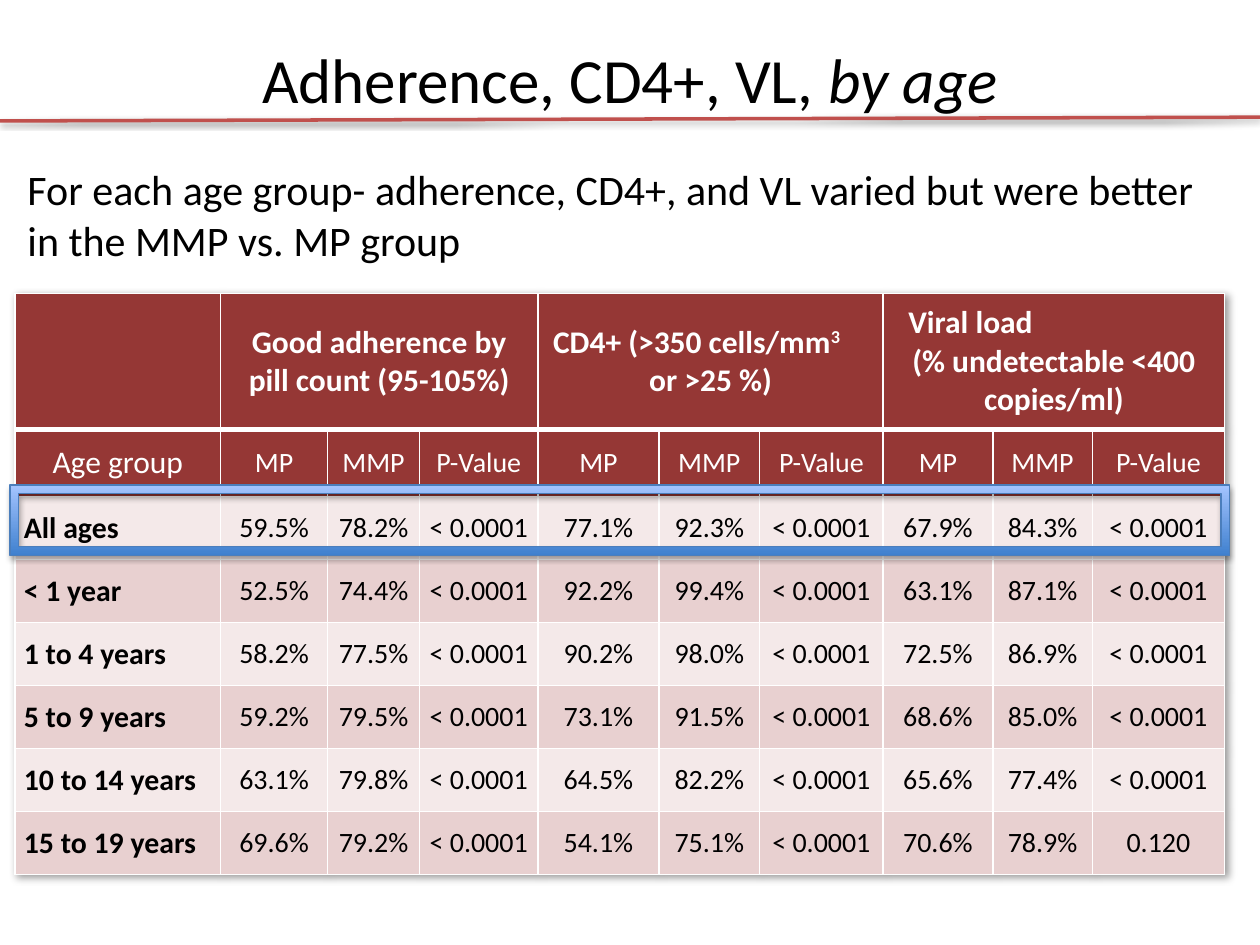
import pptx
import pptx.util
import pptx.oxml
import pptx.dml.color
import pptx.enum.text
import pptx.enum.shapes

Inches = pptx.util.Inches
Pt = pptx.util.Pt
ALIGN = pptx.enum.text.PP_ALIGN
MIDDLE = pptx.enum.text.MSO_ANCHOR.MIDDLE
NS = 'xmlns:a="http://schemas.openxmlformats.org/drawingml/2006/main"'

COLORS = {
    "ink": "000000", "white": "FFFFFF", "head": "953735",
    "pale": "F4E9E9", "rose": "E8D0D0", "rule": "C0504D",
    "deep": "3F80CE", "light": "A4C4FF", "edge": "4B7EBC",
}

# Table content: each heading is a list of (runs, left indent or None if centred)
HEADS = [
    [([("Good adherence by pill count (95-105%)", 0)], None)],
    [([("CD4+ (>350 cells/mm", 0), ("3", 30)], 0.05),
     ([("or >25 %)", 0)], None)],
    [([("Viral load", 0)], 0.13),
     ([("(% undetectable <400 copies/ml)", 0)], None)],
]
LABELS = ["Age group"] + ["MP", "MMP", "P-Value"] * 3
LOW = "< 0.0001"
ROWS = [
    ["All ages", "59.5%", "78.2%", LOW, "77.1%", "92.3%", LOW, "67.9%", "84.3%", LOW],
    ["< 1 year", "52.5%", "74.4%", LOW, "92.2%", "99.4%", LOW, "63.1%", "87.1%", LOW],
    ["1 to 4 years", "58.2%", "77.5%", LOW, "90.2%", "98.0%", LOW, "72.5%", "86.9%", LOW],
    ["5 to 9 years", "59.2%", "79.5%", LOW, "73.1%", "91.5%", LOW, "68.6%", "85.0%", LOW],
    ["10 to 14 years", "63.1%", "79.8%", LOW, "64.5%", "82.2%", LOW, "65.6%", "77.4%", LOW],
    ["15 to 19 years", "69.6%", "79.2%", LOW, "54.1%", "75.1%", LOW, "70.6%", "78.9%", "0.120"],
]
WIDTHS = [1.63, 0.85, 0.73, 0.94, 0.96, 0.8, 0.98, 0.87, 0.79, 1.05]
HEIGHTS = [1.08, 0.53] + [0.5] * len(ROWS)


def color(name):
    return pptx.dml.color.RGBColor.from_string(COLORS[name])


def write(para, text, size=16, ink="ink", bold=False, italic=False,
          align=ALIGN.CENTER, base=0, font="Calibri"):
    """Add a formatted run to a paragraph."""
    para.alignment = align
    run = para.add_run()
    run.text = text
    run.font.name, run.font.size = font, Pt(size)
    run.font.bold, run.font.italic = bold, italic
    run.font.color.rgb = color(ink)
    if base:
        run.font._element.set("baseline", str(base * 1000))


def shadow(alpha, blur, dist, angle=90):
    """Return an effect list with one outer black shadow."""
    return pptx.oxml.parse_xml(
        f'<a:effectLst {NS}><a:outerShdw blurRad="{Pt(blur)}" dist="{Pt(dist)}" '
        f'dir="{angle * 60000}" rotWithShape="0"><a:srgbClr val="{COLORS["ink"]}">'
        f'<a:alpha val="{alpha * 1000}"/></a:srgbClr></a:outerShdw></a:effectLst>')


class Deck:
    def __init__(self):
        self.show = pptx.Presentation()
        self.show.slide_width, self.show.slide_height = Inches(10), Inches(7.5)
        self.slide = self.show.slides.add_slide(self.show.slide_layouts[5])

    def title(self, box, plain, slanted):
        shape = self.slide.shapes.title
        shape.left, shape.top, shape.width, shape.height = map(Inches, box)
        shape.text_frame.vertical_anchor = MIDDLE
        para = shape.text_frame.paragraphs[0]
        write(para, plain, size=36)
        write(para, slanted, size=36, italic=True)

    def text(self, box, words, **style):
        frame = self.slide.shapes.add_textbox(*map(Inches, box)).text_frame
        frame.word_wrap = True
        write(frame.paragraphs[0], words, **style)

    def rule(self, ends, ink, width):
        line = self.slide.shapes.add_connector(
            pptx.enum.shapes.MSO_CONNECTOR.STRAIGHT, *map(Inches, ends))
        line.line.color.rgb, line.line.width = color(ink), Pt(width)
        line._element.spPr.append(shadow(38, 3.1, 1.6))

    def frame(self, box):
        shape = self.slide.shapes.add_shape(
            pptx.enum.shapes.MSO_SHAPE.FRAME, *map(Inches, box))
        shape.fill.gradient()
        shape.fill.gradient_angle = 90
        for stop, name, place in zip(shape.fill.gradient_stops, ("deep", "light"), (0, 1)):
            stop.color.rgb, stop.position = color(name), place
        shape.line.color.rgb, shape.line.width = color("edge"), Pt(0.75)
        shape._element.spPr.append(shadow(35, 3.1, 1.8))

    def cell(self, cell, fill, top=1, bottom=1):
        """Set the borders, fill and insets of a cell; return its first paragraph."""
        props = cell._tc.get_or_add_tcPr()
        for side, width in zip("LRTB", (1, 1, top, bottom)):
            props.append(pptx.oxml.parse_xml(
                f'<a:ln{side} {NS} w="{Pt(width)}"><a:solidFill>'
                f'<a:srgbClr val="{COLORS["white"]}"/></a:solidFill></a:ln{side}>'))
        cell.fill.solid()
        cell.fill.fore_color.rgb = color(fill)
        cell.vertical_anchor = MIDDLE
        cell.margin_left = cell.margin_right = Inches(0.07)
        cell.margin_top = cell.margin_bottom = 0
        return cell.text_frame.paragraphs[0]

    def table(self, left, top):
        grid = self.slide.shapes.add_table(
            len(HEIGHTS), len(WIDTHS), Inches(left), Inches(top),
            Inches(sum(WIDTHS)), Inches(sum(HEIGHTS))).table
        grid._tbl.tblPr.insert(0, shadow(40, 4, 2, 45))
        for column, width in zip(grid.columns, WIDTHS):
            column.width = Inches(width)
        for row, height in zip(grid.rows, HEIGHTS):
            row.height = Inches(height)

        # Group headings, each over three columns
        for col in range(len(WIDTHS)):
            self.cell(grid.cell(0, col), "head", bottom=3)
        for group, lines in enumerate(HEADS):
            first = 1 + 3 * group
            head = grid.cell(0, first)
            head.merge(grid.cell(0, first + 2))
            for num, (runs, indent) in enumerate(lines):
                para = head.text_frame.add_paragraph() if num else head.text_frame.paragraphs[0]
                for words, base in runs:
                    write(para, words, size=18, ink="white", bold=True, base=base,
                          align=ALIGN.CENTER if indent is None else ALIGN.LEFT)
                if indent is not None:
                    para._p.get_or_add_pPr().set("marL", str(Inches(indent)))

        # Column labels
        for col, label in enumerate(LABELS):
            para = self.cell(grid.cell(1, col), "head", top=3)
            write(para, label, size=16 if col else 18, ink="white")

        # Age groups in alternating bands
        for num, values in enumerate(ROWS):
            for col, value in enumerate(values):
                para = self.cell(grid.cell(num + 2, col), ("pale", "rose")[num % 2])
                if col:
                    write(para, value)
                else:
                    write(para, value, size=17, bold=True, align=ALIGN.LEFT)


def main():
    deck = Deck()
    # Heading and lead sentence
    deck.title((0.12, 0, 9.76, 1.25), "Adherence, CD4+, VL, ", "by age")
    deck.text((0.12, 1.25, 9.76, 0.94),
              "For each age group- adherence, CD4+, and VL varied but were better "
              "in the MMP vs. MP group", size=24, align=ALIGN.LEFT)
    deck.rule((0, 0.96, 10, 0.93), "rule", 2)
    # Results, with the overall row framed
    deck.table(0.12, 2.33)
    deck.frame((0.08, 3.85, 9.68, 0.56))
    deck.show.save("out.pptx")


if __name__ == "__main__":
    main()
